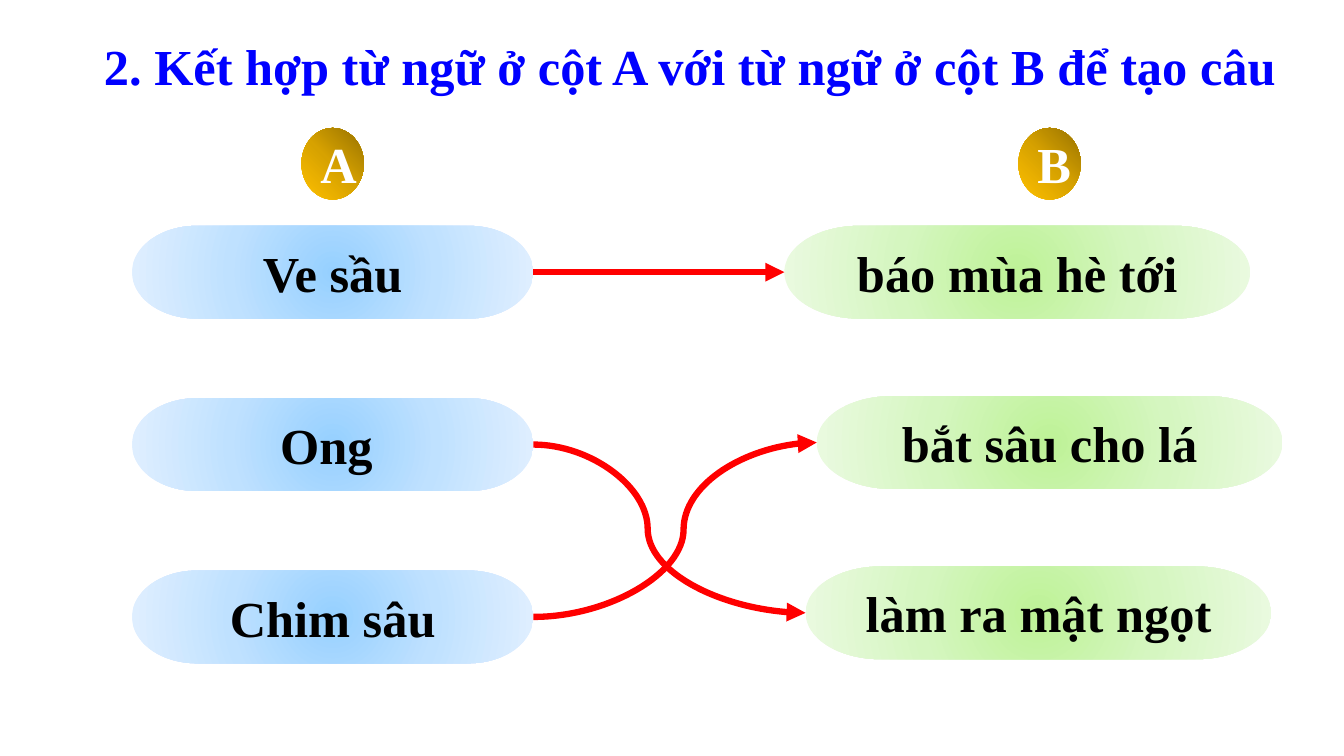
from dataclasses import dataclass

from lxml.etree import SubElement
from pptx import Presentation
from pptx.dml.color import RGBColor
from pptx.enum.shapes import MSO_CONNECTOR, MSO_SHAPE
from pptx.enum.text import MSO_ANCHOR, MSO_AUTO_SIZE, PP_ALIGN
from pptx.oxml import parse_xml
from pptx.oxml.ns import nsdecls, qn
from pptx.shapes.autoshape import Shape
from pptx.slide import Slide
from pptx.text.text import TextFrame
from pptx.util import Inches, Pt

WIDTH, HEIGHT = Inches(13.33), Inches(7.5)
FONT, SIZE = "Times New Roman", 36
COLORS = {"title": "0000FF", "text": "000000", "badge_text": "FFFFFF", "arrow": "FF0000"}
GRADIENTS = {
    "blue": ("96D0FF", "BFE1FF", "E0EFFF"),
    "green": ("BEF297", "D5F6C0", "EAFAE0"),
    "gold": ("977200", "D7A200", "FFC000"),
}
CENTER, TOP_RIGHT = (50, 50, 50, 50), (100, 0, 0, 100)
FIRST_ROW, PILL_HEIGHT = 29.87, 12.27
BADGE_TOP, BADGE_WIDTH, BADGE_HEIGHT = 16.93, 4.65, 9.47
RIGHT_SITE, LEFT_SITE = 3, 1


@dataclass(frozen=True)
class Column:
    letter: str
    badge_left: float
    width: float
    row_pitch: float
    gradient: str
    phrases: tuple[tuple[str, float], ...]


@dataclass(frozen=True)
class Match:
    a: int
    b: int
    bend: float


COLUMN_A = Column("A", 22.43, 29.86, 22.8, "blue",
                  (("Ve sầu", 9.83), ("Ong ", 9.83), ("Chim sâu", 9.83)))
COLUMN_B = Column("B", 75.77, 34.66, 22.53, "green",
                  (("báo mùa hè tới", 58.36), ("bắt sâu cho lá", 60.77),
                   ("làm ra mật ngọt", 59.94)))
MATCHES = (Match(0, 0, 0.5), Match(1, 2, 0.42), Match(2, 1, 0.53))


def across(percent: float) -> int:
    return round(WIDTH * percent / 100)


def down(percent: float) -> int:
    return round(HEIGHT * percent / 100)


def write(tf: TextFrame, text: str, color: str, align: PP_ALIGN, anchor: MSO_ANCHOR) -> None:
    tf.text = text
    tf.word_wrap = True
    tf.vertical_anchor = anchor
    p = tf.paragraphs[0]
    p.alignment = align
    font = p.runs[0].font
    font.name, font.size, font.bold = FONT, Pt(SIZE), True
    font.color.rgb = RGBColor.from_string(COLORS[color])


def fill_radial(sp: Shape, gradient: str, focus: tuple[int, int, int, int]) -> None:
    stops = "".join(
        f'<a:gs pos="{i * 50000}"><a:srgbClr val="{color}"/></a:gs>'
        for i, color in enumerate(GRADIENTS[gradient]))
    rect = " ".join(f'{side}="{share * 1000}"' for side, share in zip("ltrb", focus))
    sp._element.spPr.find(qn("a:prstGeom")).addnext(parse_xml(
        f'<a:gradFill {nsdecls("a")} rotWithShape="1"><a:gsLst>{stops}</a:gsLst>'
        f'<a:path path="circle"><a:fillToRect {rect}/></a:path></a:gradFill>'))


def add_label(s: Slide, kind: MSO_SHAPE, box: tuple[float, float, float, float], text: str,
              color: str, gradient: str, focus: tuple[int, int, int, int]) -> Shape:
    left, top, width, height = box
    sp = s.shapes.add_shape(kind, across(left), down(top), across(width), down(height))
    sp.shadow.inherit = False
    sp.line.fill.background()
    fill_radial(sp, gradient, focus)
    write(sp.text_frame, text, color, PP_ALIGN.CENTER, MSO_ANCHOR.MIDDLE)
    return sp


def add_column(s: Slide, column: Column) -> list[Shape]:
    add_label(s, MSO_SHAPE.OVAL, (column.badge_left, BADGE_TOP, BADGE_WIDTH, BADGE_HEIGHT),
              column.letter, "badge_text", "gold", TOP_RIGHT)
    return [
        add_label(s, MSO_SHAPE.FLOWCHART_TERMINATOR,
                  (left, FIRST_ROW + row * column.row_pitch, column.width, PILL_HEIGHT),
                  phrase, "text", column.gradient, CENTER)
        for row, (phrase, left) in enumerate(column.phrases)]


def add_arrow(s: Slide, start: Shape, end: Shape, bend: float) -> None:
    arrow = s.shapes.add_connector(
        MSO_CONNECTOR.CURVE, start.left + start.width, start.top + start.height // 2,
        end.left, end.top + end.height // 2)
    arrow.begin_connect(start, RIGHT_SITE)
    arrow.end_connect(end, LEFT_SITE)
    arrow.line.color.rgb = RGBColor.from_string(COLORS["arrow"])
    arrow.line.width = Pt(4.5)
    spPr = arrow._element.spPr
    SubElement(spPr.find(qn("a:ln")), qn("a:tailEnd"), type="triangle")
    SubElement(spPr, qn("a:effectLst"))
    geom = spPr.find(qn("a:prstGeom"))
    guides = geom.find(qn("a:avLst"))
    if guides is None:
        guides = SubElement(geom, qn("a:avLst"))
    SubElement(guides, qn("a:gd"), name="adj1", fmla=f"val {round(bend * 100000)}")


def add_title(s: Slide, text: str) -> None:
    title = s.shapes.title
    title.left, title.top = across(6.98), down(4)
    title.width, title.height = across(89.65), down(9.47)
    write(title.text_frame, text, "title", PP_ALIGN.LEFT, MSO_ANCHOR.TOP)
    title.text_frame.auto_size = MSO_AUTO_SIZE.NONE


def main() -> None:
    prs = Presentation()
    prs.slide_width, prs.slide_height = WIDTH, HEIGHT
    s = prs.slides.add_slide(prs.slide_layouts[5])
    add_title(s, "2. Kết hợp từ ngữ ở cột A với từ ngữ ở cột B để tạo câu")
    pills_a, pills_b = (add_column(s, column) for column in (COLUMN_A, COLUMN_B))
    for match in MATCHES:
        add_arrow(s, pills_a[match.a], pills_b[match.b], match.bend)
    prs.save("out.pptx")


if __name__ == "__main__":
    main()
